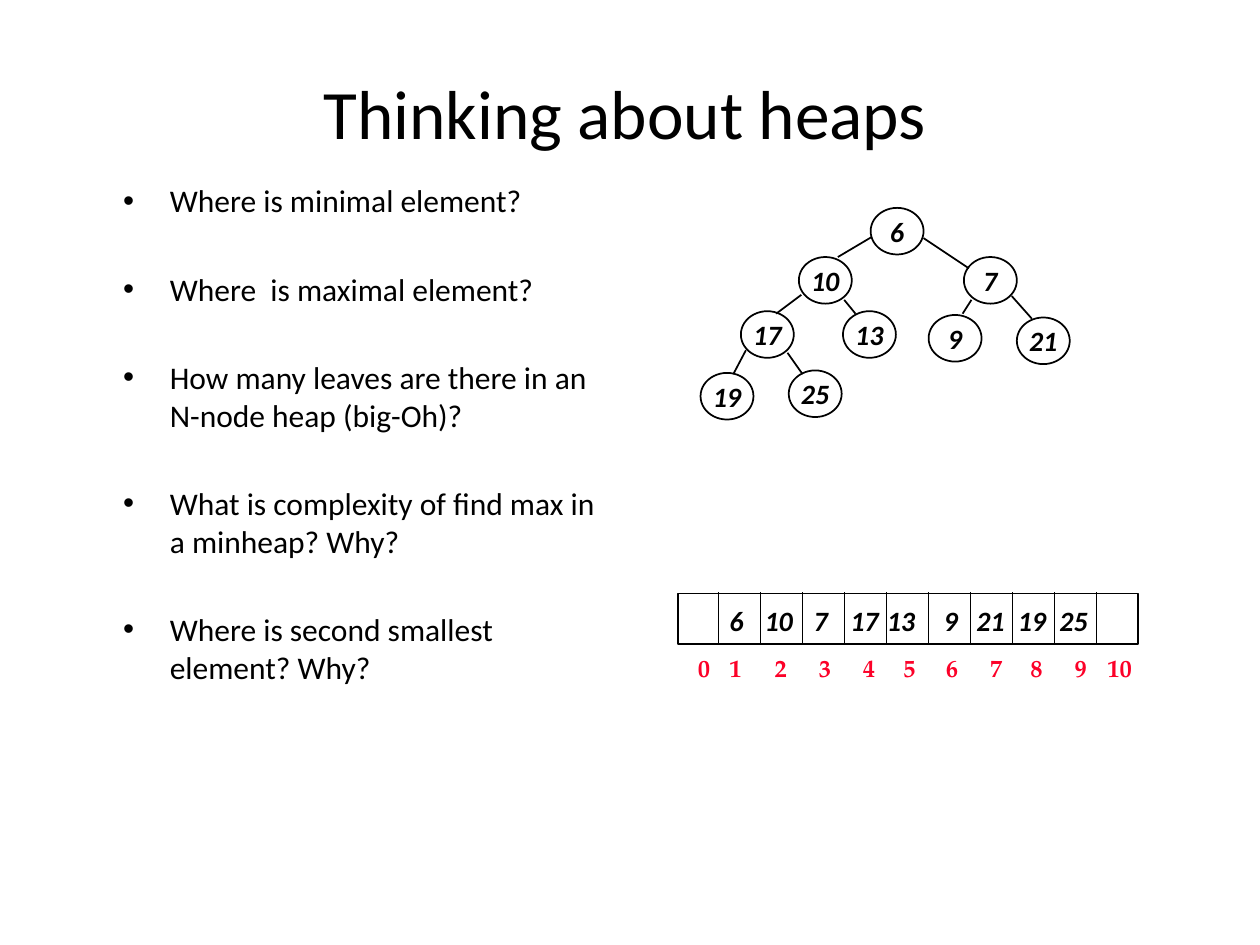
from typing import NamedTuple

from pptx import Presentation
from pptx.dml.color import RGBColor
from pptx.enum.shapes import MSO_CONNECTOR as Conn, MSO_SHAPE as Geo
from pptx.enum.text import MSO_ANCHOR as Anchor, MSO_AUTO_SIZE as Fit, PP_ALIGN as Align
from pptx.oxml.ns import qn
from pptx.util import Inches, Pt

# The slide is a grid of 100 columns by 75 rows
UNIT = Inches(0.1)
BLACK, RED = "000000", "FC0128"
SANS, SERIF = "Calibri", "TeX Gyre Pagella"


class Node(NamedTuple):
    key: str
    col: float
    row: float


class Edge(NamedTuple):
    col: float
    row: float
    to_col: float
    to_row: float


class Cell(NamedTuple):
    key: str
    col: float
    mark: float


ASKS = ["Where is minimal element?", "Where  is maximal element?",
        "How many leaves are there in an N-node heap (big-Oh)?",
        "What is complexity of find max in a minheap? Why?",
        "Where is second smallest element? Why?"]

NODES = [Node("6", 69.1, 16.5), Node("10", 63.4, 20.4), Node("7", 76.5, 20.4),
         Node("17", 58.8, 24.7), Node("13", 66.9, 24.7), Node("9", 73.7, 25),
         Node("21", 80.7, 25.2), Node("19", 55.6, 29.6), Node("25", 62.6, 29.4)]

EDGES = [Edge(69.2, 18.8, 66.5, 20.4), Edge(63.6, 23.4, 61.6, 24.9),
         Edge(59.2, 27.8, 58.2, 29.7), Edge(62.5, 28, 63.7, 29.7),
         Edge(67, 23.8, 67.9, 24.9), Edge(73.3, 18.9, 76.9, 21.3),
         Edge(77.1, 23.8, 76.4, 24.9), Edge(80.3, 23.5, 81.9, 25.3)]

# Key, column of the key, column of the index below it
CELLS = [Cell("", 0, 54.4), Cell("6", 56.9, 56.9), Cell("10", 59.7, 60.5),
         Cell("7", 63.6, 64), Cell("17", 66.5, 67.5), Cell("13", 69.4, 70.7),
         Cell("9", 73.9, 74.1), Cell("21", 76.5, 77.6), Cell("19", 79.8, 80.8),
         Cell("25", 83.1, 84.3), Cell("", 0, 86.9)]


def grid(*vals: float) -> list[int]:
    return [round(v * UNIT) for v in vals]


def tint(code: str) -> RGBColor:
    return RGBColor.from_string(code)


def style(para, size: float, face: str = SANS, code: str = BLACK,
          bold: bool = False, slant: bool = False) -> None:
    for run in para.runs:
        font = run.font
        font.size, font.name = Pt(size), face
        font.bold, font.italic = bold, slant
        font.color.rgb = tint(code)


def form(page, geo, *box: float):
    item = page.shapes.add_shape(geo, *grid(*box))
    item.shadow.inherit = False
    item.fill.background()
    item.line.color.rgb, item.line.width = tint(BLACK), Pt(1)
    return item


def link(page, edge: Edge) -> None:
    line = page.shapes.add_connector(Conn.STRAIGHT, *grid(*edge))
    line.line.color.rgb, line.line.width = tint(BLACK), Pt(1)
    props = line._element.spPr
    props.append(props.makeelement(qn("a:effectLst"), {}))


def circle(page, node: Node) -> None:
    frame = form(page, Geo.OVAL, node.col, node.row, 4.2, 3.7).text_frame
    frame.word_wrap, frame.vertical_anchor = False, Anchor.MIDDLE
    frame.text = node.key
    frame.paragraphs[0].alignment = Align.CENTER
    style(frame.paragraphs[0], 16, bold=True, slant=True)


def label(page, text: str, *box: float, **look) -> None:
    frame = page.shapes.add_textbox(*grid(*box)).text_frame
    frame.word_wrap, frame.auto_size = False, Fit.SHAPE_TO_FIT_TEXT
    frame.text = text
    style(frame.paragraphs[0], bold=True, **look)


def bullet(para) -> None:
    props = para._p.get_or_add_pPr()
    dent = Inches(0.37)
    props.set("marL", str(dent))
    props.set("indent", str(-dent))
    props.append(props.makeelement(qn("a:buFont"), {"typeface": "Arial"}))
    props.append(props.makeelement(qn("a:buChar"), {"char": "•"}))


def head(page, text: str) -> None:
    title = page.shapes.title
    title.left, title.top, title.width, title.height = grid(8.3, 5, 82.6, 7.8)
    frame = title.text_frame
    frame.text, frame.vertical_anchor = text, Anchor.MIDDLE
    frame.paragraphs[0].alignment = Align.CENTER
    style(frame.paragraphs[0], 39.6)


def asks(page) -> None:
    frame = page.shapes.add_textbox(*grid(8.8, 13.9, 40.4, 49.2)).text_frame
    frame.word_wrap = True
    frame.text = "\n".join(ASKS)
    for i, para in enumerate(frame.paragraphs):
        para.space_before = Pt(28.8 if i else 3.6)
        bullet(para)
        style(para, 18)


def tree(page) -> None:
    for node in NODES:
        circle(page, node)
    for edge in EDGES:
        link(page, edge)


def array(page) -> None:
    form(page, Geo.RECTANGLE, 53.8, 47.1, 36.5, 4)
    pitch = 10 / 3
    for i, cell in enumerate(CELLS):
        if i:
            col = 53.7 + i * pitch
            link(page, Edge(col, 47, col, 51.2))
        # Two digits need room to stay on one line
        wide = 4.4 if i > 9 else 3
        label(page, str(i), cell.mark, 51.3, wide, 3.3, size=14, face=SERIF, code=RED)
        if cell.key:
            wide = 4.7 if len(cell.key) > 1 else 3.3
            label(page, cell.key, cell.col, 47.4, wide, 3.6, size=16, slant=True)


def main() -> None:
    deck = Presentation()
    deck.slide_width, deck.slide_height = grid(100, 75)
    page = deck.slides.add_slide(deck.slide_layouts[5])
    head(page, "Thinking about heaps")
    asks(page)
    tree(page)
    array(page)
    deck.save("out.pptx")


if __name__ == "__main__":
    main()
